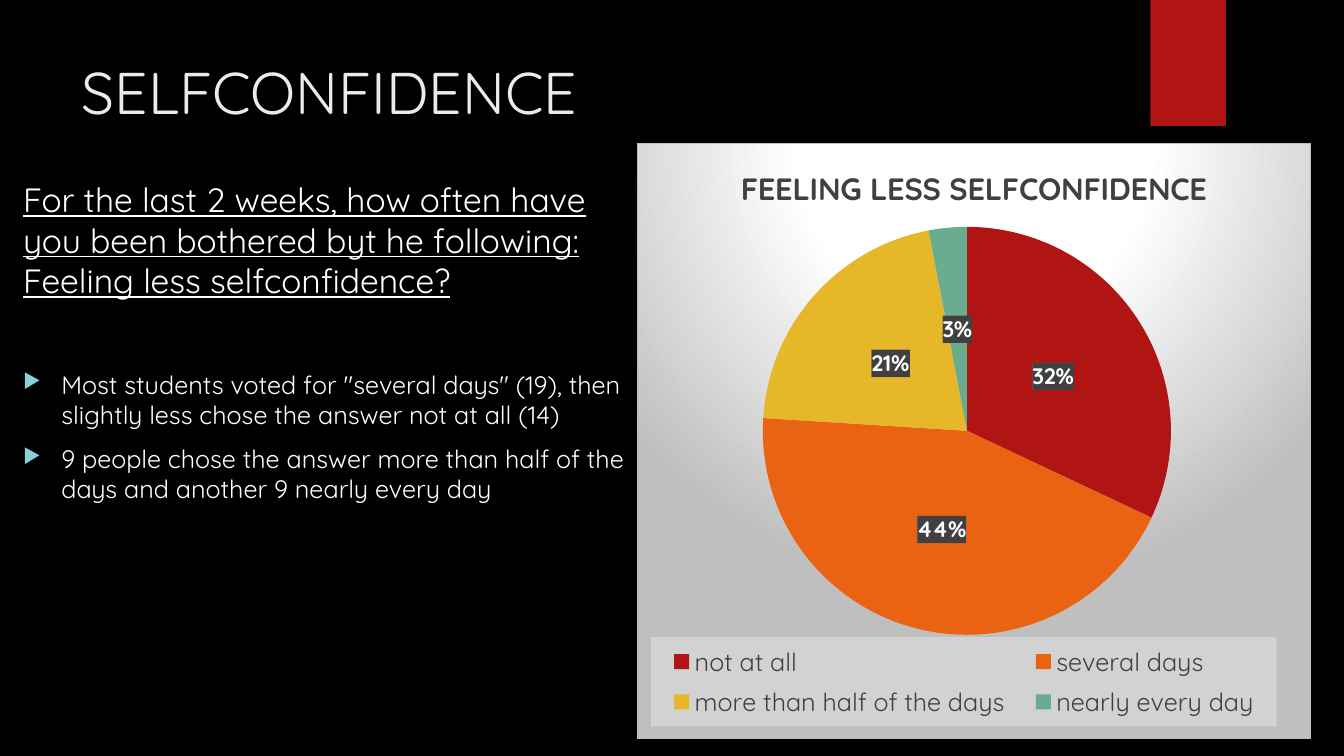
from lxml import etree
from pptx import Presentation
from pptx.chart.data import CategoryChartData
from pptx.dml.color import RGBColor
from pptx.enum.chart import XL_CHART_TYPE, XL_LABEL_POSITION, XL_LEGEND_POSITION
from pptx.enum.shapes import MSO_SHAPE
from pptx.enum.text import MSO_ANCHOR, PP_ALIGN
from pptx.oxml import parse_xml
from pptx.oxml.ns import qn
from pptx.util import Inches, Pt

PIE = XL_CHART_TYPE.PIE
CENTER_LABEL = XL_LABEL_POSITION.CENTER
RIGHT_LEGEND = XL_LEGEND_POSITION.RIGHT
RECTANGLE = MSO_SHAPE.RECTANGLE
TOP = MSO_ANCHOR.TOP
LEFT = PP_ALIGN.LEFT

FONT = "Quicksand"
WHITE, DARK_GRAY, ACCENT_RED = "FFFFFF", "404040", "B01513"
NAMESPACES = (
    'xmlns:a="http://schemas.openxmlformats.org/drawingml/2006/main" '
    'xmlns:c="http://schemas.openxmlformats.org/drawingml/2006/chart"'
)


def style_font(font, size, color, **formats):
    values = {"name": FONT, "size": Pt(size), **formats}
    for attribute, value in values.items():
        setattr(font, attribute, value)
    font.color.rgb = RGBColor.from_string(color)


def set_layout(parent, index, box, inner=False):
    """Place a chart part by x, y, width and height as fractions of the chart."""
    for old in parent.findall(qn("c:layout")):
        parent.remove(old)
    target = '<c:layoutTarget val="inner"/>' if inner else ""
    modes = '<c:xMode val="edge"/><c:yMode val="edge"/>'
    sizes = "".join(f'<c:{key} val="{value}"/>' for key, value in zip("xywh", box))
    parent.insert(index, parse_xml(
        f"<c:layout {NAMESPACES}><c:manualLayout>{target}{modes}{sizes}"
        "</c:manualLayout></c:layout>"))


presentation = Presentation()
presentation.slide_width = Inches(13.33)
presentation.slide_height = Inches(7.5)
slide = presentation.slides.add_slide(presentation.slide_layouts[5])
slide.background.fill.solid()
slide.background.fill.fore_color.rgb = RGBColor.from_string("000000")

# Red bookmark at the top edge
bookmark = slide.shapes.add_shape(
    RECTANGLE, Inches(11.41), Inches(0), Inches(0.75), Inches(1.25))
bookmark.shadow.inherit = False
bookmark.fill.solid()
bookmark.fill.fore_color.rgb = RGBColor.from_string(ACCENT_RED)
bookmark.line.fill.background()

# Title
title = slide.shapes.title
title.left, title.top = Inches(0.71), Inches(0.5)
title.width, title.height = Inches(10.29), Inches(1.53)
title.text_frame.text = "SELFCONFIDENCE"
title.text_frame.vertical_anchor = TOP
heading = title.text_frame.paragraphs[0]
heading.alignment = LEFT
style_font(heading.font, 42, "EBEBEB")

# Question and findings
body = slide.shapes.add_textbox(
    Inches(0.13), Inches(1.73), Inches(6.19), Inches(5.11)).text_frame
body.word_wrap = True
question = body.paragraphs[0]
question.text = ("For the last 2 weeks, how often have you been bothered byt he "
                 "following: Feeling less selfconfidence?")
style_font(question.font, 24, WHITE, underline=True)

findings = [
    ('Most students voted for "several days" (19), then slightly less chose '
     "the answer not at all (14)", 49),
    ("9 people chose the answer more than half of the days and another 9 "
     "nearly every day", 10),
]
for finding, space_before in findings:
    paragraph = body.add_paragraph()
    paragraph.text = finding
    properties = paragraph._p.get_or_add_pPr()
    properties.set("marL", str(Inches(0.38)))
    properties.set("indent", str(-Inches(0.38)))
    bullet_color = etree.SubElement(properties, qn("a:buClr"))
    etree.SubElement(bullet_color, qn("a:srgbClr"), val="8AD0D6")
    etree.SubElement(properties, qn("a:buSzPct"), val="80000")
    etree.SubElement(properties, qn("a:buChar"), char="▶")
    paragraph.space_before = Pt(space_before)
    style_font(paragraph.font, 18, WHITE)

# Pie chart
answers = [
    ("not at all", 32, ACCENT_RED),
    ("several days", 44, "EA6312"),
    ("more than half of the days", 21, "E6B729"),
    ("nearly every day", 3, "6AAC90"),
]
chart_title = "FEELING LESS SELFCONFIDENCE"
chart_data = CategoryChartData()
chart_data.categories = [answer for answer, _, _ in answers]
chart_data.add_series(chart_title, [share for _, share, _ in answers])
chart = slide.shapes.add_chart(
    PIE, Inches(6.32), Inches(1.42), Inches(6.68), Inches(5.91), chart_data).chart
style_font(chart.font, 10, WHITE)

chart.has_title = True
chart.chart_title.text_frame.text = chart_title
style_font(chart.chart_title.text_frame.paragraphs[0].runs[0].font,
           22, DARK_GRAY, bold=True)

pie = chart.plots[0]
pie.vary_by_categories = True
for index, (_, _, color) in enumerate(answers):
    slice_fill = pie.series[0].points[index].format.fill
    slice_fill.solid()
    slice_fill.fore_color.rgb = RGBColor.from_string(color)

labels = pie.series[0].data_labels
label_formats = {"show_percentage": True, "show_value": False,
                 "show_legend_key": False, "number_format": "0%",
                 "number_format_is_linked": False, "position": CENTER_LABEL}
for attribute, value in label_formats.items():
    setattr(labels, attribute, value)
style_font(labels.font, 16, WHITE, bold=True)
labels._element.find(qn("c:txPr")).addprevious(parse_xml(
    f'<c:spPr {NAMESPACES}><a:pattFill prst="dkVert">'
    f'<a:fgClr><a:srgbClr val="{DARK_GRAY}"/></a:fgClr>'
    '<a:bgClr><a:srgbClr val="595959"/></a:bgClr></a:pattFill></c:spPr>'))

chart.has_legend = True
legend = chart.legend
legend.position = RIGHT_LEGEND
legend.include_in_layout = False
style_font(legend.font, 18, DARK_GRAY)
legend._element.find(qn("c:txPr")).addprevious(parse_xml(
    f'<c:spPr {NAMESPACES}><a:solidFill><a:srgbClr val="F2F2F2">'
    '<a:alpha val="39000"/></a:srgbClr></a:solidFill></c:spPr>'))
set_layout(legend._element, 1, (0.02, 0.83, 0.93, 0.15))

chart_space = chart._chartSpace
plot_area = chart_space.find(qn("c:chart")).find(qn("c:plotArea"))
set_layout(plot_area, 0, (0.185, 0.14, 0.609, 0.686), inner=True)

# Spotlight behind the chart
gradient_stops = "".join(
    f'<a:gs pos="{position}000"><a:srgbClr val="{color}"/></a:gs>'
    for position, color in ((0, WHITE), (39, WHITE), (100, "BFBFBF")))
chart_space.find(qn("c:txPr")).addprevious(parse_xml(
    f"<c:spPr {NAMESPACES}><a:gradFill><a:gsLst>{gradient_stops}</a:gsLst>"
    '<a:path path="circle"><a:fillToRect l="50000" t="-80000" r="50000" b="180000"/>'
    f'</a:path></a:gradFill><a:ln w="{Pt(0.75)}"><a:solidFill>'
    '<a:srgbClr val="BFBFBF"/></a:solidFill></a:ln></c:spPr>'))

presentation.save("out.pptx")
